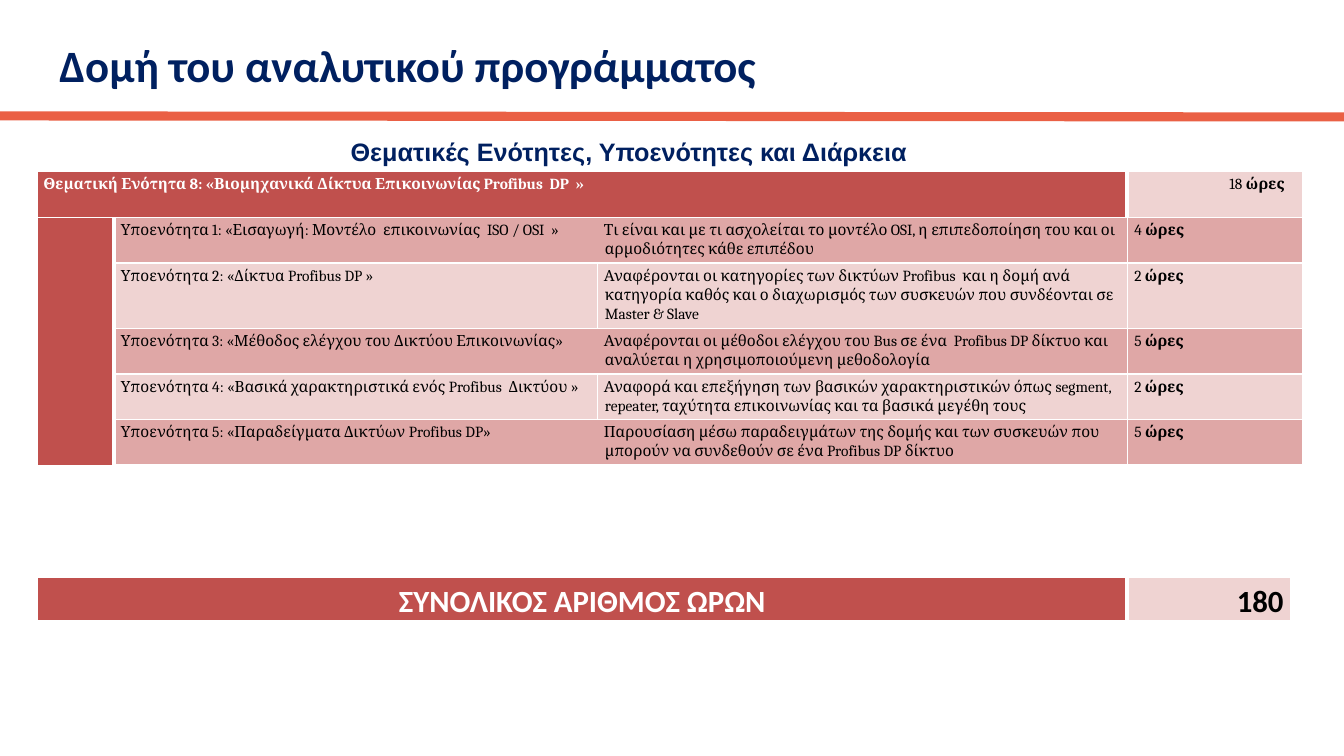
from lxml.etree import SubElement
from pptx import Presentation
from pptx.dml.color import RGBColor
from pptx.enum.shapes import MSO_CONNECTOR, MSO_SHAPE
from pptx.enum.text import MSO_ANCHOR, MSO_AUTO_SIZE, PP_ALIGN
from pptx.oxml.ns import qn
from pptx.util import Inches, Pt

TITLE = "Δομή του αναλυτικού προγράμματος"
SUBTITLE = "Θεματικές Ενότητες, Υποενότητες και Διάρκεια"
UNIT = "Θεματική Ενότητα 8: «Βιομηχανικά Δίκτυα Επικοινωνίας Profibus  DP  »"
UNIT_HOURS = " 18"
HOURS_WORD = " ώρες"
SUBUNITS = [
    ("Υποενότητα 1: «Εισαγωγή: Μοντέλο  επικοινωνίας  ISO / OSI  » ",
     "Τι είναι και με τι ασχολείται το μοντέλο OSI, η επιπεδοποίηση του και "
     "οι αρμοδιότητες κάθε επιπέδου", "4"),
    ("Υποενότητα 2: «Δίκτυα Profibus DP »",
     "Αναφέρονται οι κατηγορίες των δικτύων Profibus  και η δομή ανά κατηγορία "
     "καθός και ο διαχωρισμός των συσκευών που συνδέονται σε Master & Slave", "2"),
    ("Υποενότητα 3: «Μέθοδος ελέγχου του Δικτύου Επικοινωνίας»",
     "Αναφέρονται οι μέθοδοι ελέγχου του Bus σε ένα  Profibus DP δίκτυο και "
     "αναλύεται η χρησιμοποιούμενη μεθοδολογία", "5"),
    ("Υποενότητα 4: «Βασικά χαρακτηριστικά ενός Profibus  Δικτύου » ",
     "Αναφορά και επεξήγηση των βασικών χαρακτηριστικών όπως segment, repeater, "
     "ταχύτητα επικοινωνίας και τα βασικά μεγέθη τους", "2"),
    ("Υποενότητα 5: «Παραδείγματα Δικτύων Profibus DP»",
     "Παρουσίαση μέσω παραδειγμάτων της δομής και των συσκευών που μπορούν να "
     "συνδεθούν σε ένα Profibus DP δίκτυο", "5"),
]
TOTAL_LABEL, TOTAL_HOURS = "ΣΥΝΟΛΙΚΟΣ ΑΡΙΘΜΟΣ ΩΡΩΝ", "180"

UNIT_COLUMNS = [0.76, 4.8, 5.25, 0.98, 0.75]
UNIT_ROWS = [0.46, 0.45, 0.65, 0.45, 0.45, 0.45]
TOTAL_COLUMNS, TOTAL_ROWS = [10.81, 1.62], [0.42]
TABLE_LEFT = 0.37

WHITE = RGBColor(0xFF, 0xFF, 0xFF)
BLACK = RGBColor(0, 0, 0)
NAVY = RGBColor(0x00, 0x20, 0x60)
ORANGE = RGBColor(0xEA, 0x60, 0x45)
RED = RGBColor(0xC0, 0x50, 0x4D)
ROSE = RGBColor(0xDF, 0xA7, 0xA6)
PALE = RGBColor(0xEF, 0xD3, 0xD2)


def add_run(paragraph, text, font, size, color, bold=True):
    run = paragraph.add_run()
    run.text = text
    run.font.name, run.font.size, run.font.bold = font, Pt(size), bold
    run.font.color.rgb = color


def add_plain_table(slide, top, columns, rows):
    """Add a table without style banding, sized by its columns and rows."""
    table = slide.shapes.add_table(
        len(rows), len(columns), Inches(TABLE_LEFT), Inches(top),
        Inches(sum(columns)), Inches(sum(rows))).table
    table.first_row = table.horz_banding = False
    for column, width in zip(table.columns, columns):
        column.width = Inches(width)
    for row, height in zip(table.rows, rows):
        row.height = Inches(height)
    return table


def style_cell(cell, fill, margins, borders):
    """Set margins and white borders (points, 0 = none), both left, top, right, bottom."""
    (cell.margin_left, cell.margin_top,
     cell.margin_right, cell.margin_bottom) = map(Inches, margins)
    properties = cell._tc.get_or_add_tcPr()
    for tag, width in zip(("lnL", "lnT", "lnR", "lnB"), borders):
        line = SubElement(properties, qn("a:" + tag), w=str(Pt(width)))
        if width:
            solid = SubElement(line, qn("a:solidFill"))
            SubElement(solid, qn("a:srgbClr"), val=str(WHITE))
        else:
            SubElement(line, qn("a:noFill"))
    cell.fill.solid()
    cell.fill.fore_color.rgb = fill


def write_unit_cell(cell, indent, runs, color=BLACK):
    paragraph = cell.text_frame.paragraphs[0]
    paragraph.line_spacing = 1.07
    properties = paragraph._p.get_or_add_pPr()
    properties.set("marL", str(Inches(indent)))
    properties.set("indent", str(Inches(-0.01)))
    for text, bold in runs:
        add_run(paragraph, text, "Cambria", 11, color, bold)
    return paragraph


def add_unit_table(slide):
    table = add_plain_table(slide, 1.7, UNIT_COLUMNS, UNIT_ROWS)
    for first, last in (((0, 0), (0, 2)), ((1, 0), (2, 0)), ((3, 0), (5, 0))):
        table.cell(*first).merge(table.cell(*last))

    for r in range(len(UNIT_ROWS)):
        band = PALE if r % 2 == 0 else ROSE
        uprights = [1, 3, 1 - r % 2, 1, 0, 0] if r else [1, 0, 0, 3, 0, 0]
        for c in range(len(UNIT_COLUMNS)):
            cell = table.cell(r, c)
            right = c + (cell.span_width if cell.is_merge_origin else 1)
            top = 0 if c == 0 and r > 1 else 1
            bottom = 0 if c == 0 and r > 0 else 1
            in_red = c == 0 or (r == 0 and c < 3)
            style_cell(cell, RED if in_red else band, (0, 0.03, 0.03, 0),
                       (uprights[c], top, uprights[right], bottom))

    write_unit_cell(table.cell(0, 0), 0.07, [(UNIT, True)], WHITE)
    unit_hours = write_unit_cell(
        table.cell(0, 4), 0.01, [(UNIT_HOURS, False), (HOURS_WORD + " ", True)])
    unit_hours.alignment = PP_ALIGN.JUSTIFY
    for r, (subunit, description, hours) in enumerate(SUBUNITS, 1):
        write_unit_cell(table.cell(r, 1), 0.08, [(subunit, False)])
        write_unit_cell(table.cell(r, 2), 0.07, [(description, False)])
        write_unit_cell(table.cell(r, 3), 0.08, [(hours, False), (HOURS_WORD, True)])


def add_total_table(slide):
    table = add_plain_table(slide, 5.73, TOTAL_COLUMNS, TOTAL_ROWS)
    parts = [(TOTAL_LABEL, PP_ALIGN.CENTER, WHITE, RED, (1, 1, 3, 1)),
             (TOTAL_HOURS, PP_ALIGN.RIGHT, BLACK, PALE, (3, 1, 1, 1))]
    for c, (text, alignment, color, fill, borders) in enumerate(parts):
        cell = table.cell(0, c)
        style_cell(cell, fill, (0.07, 0, 0.07, 0), borders)
        paragraph = cell.text_frame.paragraphs[0]
        paragraph.alignment = alignment
        paragraph.line_spacing, paragraph.space_after = 1.15, Pt(10)
        add_run(paragraph, text, "Calibri", 22, color)


def add_heading(slide):
    title = slide.shapes.add_shape(
        MSO_SHAPE.RECTANGLE, Inches(0.49), Inches(0.05), Inches(12), Inches(1.25))
    title.shadow.inherit = False
    title.fill.solid()
    title.fill.fore_color.rgb = WHITE
    title.line.fill.background()
    title.text_frame.word_wrap = True
    title.text_frame.vertical_anchor = MSO_ANCHOR.MIDDLE
    paragraph = title.text_frame.paragraphs[0]
    paragraph.alignment, paragraph.line_spacing = PP_ALIGN.LEFT, 0.9
    add_run(paragraph, TITLE, "Calibri", 32, NAVY)

    rule = slide.shapes.add_connector(
        MSO_CONNECTOR.STRAIGHT, 0, Inches(1.15), Inches(13.33), Inches(1.16))
    rule.line.color.rgb, rule.line.width = ORANGE, Pt(6.5)
    SubElement(rule._element.spPr, qn("a:effectLst"))

    subtitle = slide.shapes.add_textbox(
        Inches(3.38), Inches(1.3), Inches(5.77), Inches(0.4)).text_frame
    subtitle.word_wrap = False
    subtitle.auto_size = MSO_AUTO_SIZE.SHAPE_TO_FIT_TEXT
    add_run(subtitle.paragraphs[0], SUBTITLE, "Arial", 18, NAVY)


def main():
    deck = Presentation()
    deck.slide_width, deck.slide_height = Inches(13.33), Inches(7.5)
    slide = deck.slides.add_slide(deck.slide_layouts[6])
    add_total_table(slide)
    add_heading(slide)
    add_unit_table(slide)
    deck.save("out.pptx")


if __name__ == "__main__":
    main()
